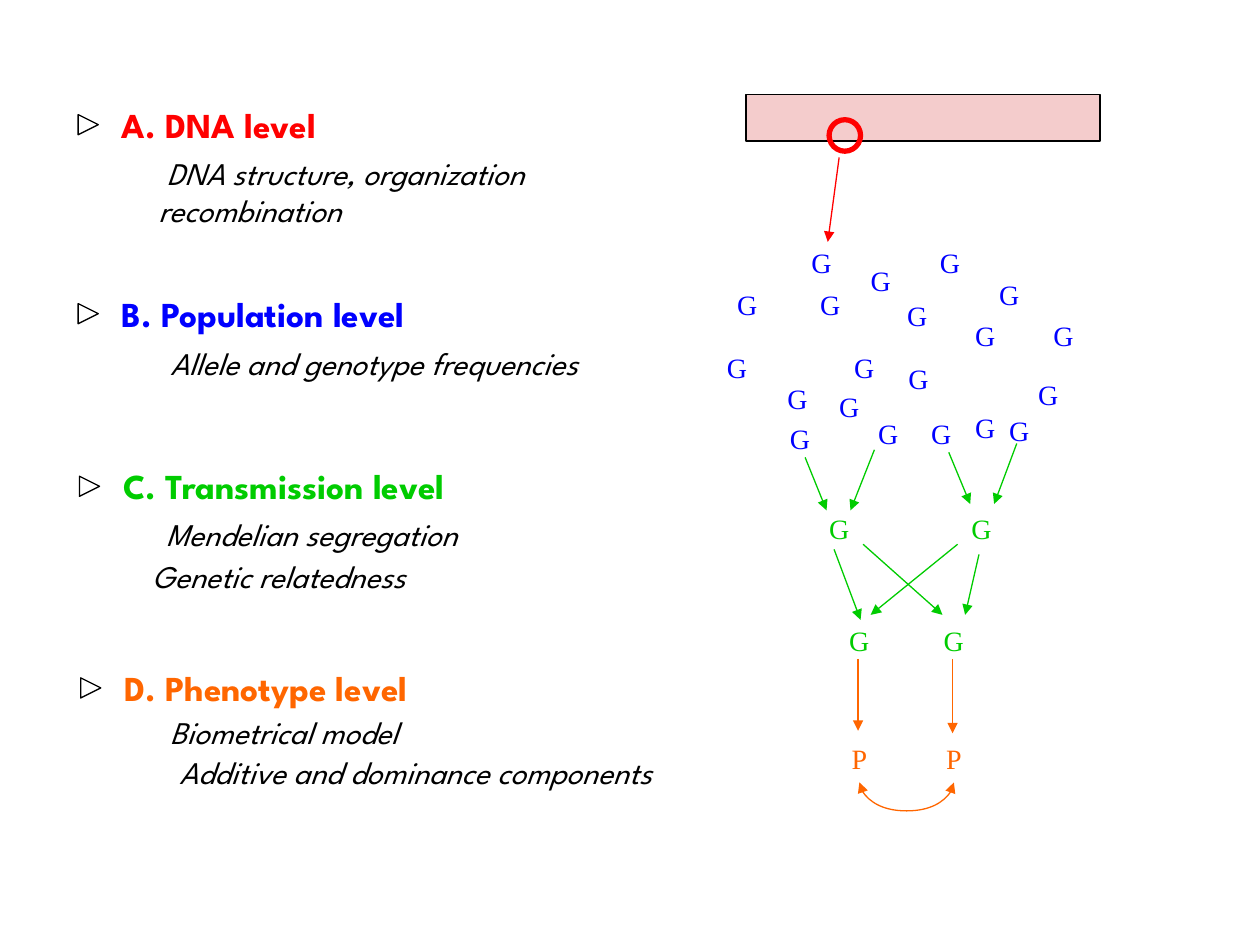
"""Build a slide that links four levels of genetics to a gene flow diagram."""
from dataclasses import dataclass

from lxml.etree import SubElement
from pptx import Presentation
from pptx.dml.color import RGBColor
from pptx.enum.shapes import MSO_CONNECTOR as Connector, MSO_SHAPE as Preset
from pptx.enum.text import MSO_AUTO_SIZE as AutoSize, PP_ALIGN as Align
from pptx.oxml.ns import qn
from pptx.util import Inches, Pt


@dataclass(frozen=True)
class Theme:
    """Hold the colours, fonts and sizes of the slide."""
    dna: str = "FF0000"
    population: str = "0000FF"
    transmission: str = "00CC00"
    phenotype: str = "FF6600"
    ink: str = "000000"
    strand: str = "CC0000"
    strand_opacity: int = 20
    sans: str = "League Spartan"
    serif: str = "Times New Roman"
    heading: int = 20
    topic: int = 18
    symbol: int = 16
    thin: float = 0.75
    thick: float = 3


THEME = Theme()

LEVELS = [
    ("A. DNA level", THEME.dna, 0.87, 0.77, 1.93, [
        ("DNA structure, organization", 1.11, 1.17, 3.27, Align.CENTER),
        ("recombination", 1.10, 1.47, 1.77, Align.CENTER)]),
    ("B. Population level", THEME.population, 0.87, 2.27, 2.76, [
        ("Allele and genotype frequencies", 1.09, 2.68, 3.76, Align.CENTER)]),
    ("C. Transmission level", THEME.transmission, 0.88, 3.64, 3.13, [
        ("Mendelian segregation", 1.11, 4.04, 2.73, Align.CENTER),
        ("Genetic relatedness", 1.11, 4.37, 2.42, Align.LEFT)]),
    ("D. Phenotype level", THEME.phenotype, 0.89, 5.24, 2.67, [
        ("Biometrical model", 1.16, 5.61, 2.19, Align.CENTER),
        ("Additive and dominance components", 1.15, 5.93, 4.30, Align.CENTER)]),
]

SYMBOLS = [
    ("G", THEME.population, 0.36, [
        (6.81, 2.04), (7.64, 3.21), (5.75, 2.23), (6.34, 1.90), (6.56, 3.04),
        (7.10, 2.32), (5.67, 2.73), (7.36, 1.90), (7.64, 2.48), (6.15, 2.98),
        (6.68, 2.73), (7.83, 2.15), (8.14, 2.95), (6.41, 2.23), (7.11, 2.82),
        (8.26, 2.48), (6.87, 3.26), (6.17, 3.30), (7.29, 3.26), (7.91, 3.23)]),
    ("G", THEME.transmission, 0.36, [
        (6.48, 4.01), (7.61, 4.01), (6.64, 4.90), (7.39, 4.90)]),
    ("P", THEME.phenotype, 0.32, [(6.66, 5.84), (7.41, 5.84)]),
]

ARROWS = [
    (THEME.dna, [(6.66, 1.25, 6.57, 1.92)]),
    (THEME.transmission, [
        (6.39, 3.63, 6.56, 4.05), (6.94, 3.57, 6.75, 4.05),
        (7.53, 3.59, 7.70, 4.00), (8.07, 3.52, 7.89, 4.00),
        (6.85, 4.32, 7.48, 4.88), (7.77, 4.40, 7.66, 4.88),
        (6.62, 4.36, 6.83, 4.92), (7.60, 4.32, 6.91, 4.88)]),
    (THEME.phenotype, [(6.81, 5.23, 6.81, 5.80), (7.56, 5.23, 7.56, 5.82)]),
]

STRAND = (5.92, 0.75, 2.81, 0.37)
LOCUS = (6.58, 0.95, 0.25, 0.25)
MARKER_SIZE, MARKER_GAP, MARKER_DROP = 0.16, 0.25, 0.14
HEADING_HEIGHT, TOPIC_HEIGHT, SYMBOL_HEIGHT = 0.43, 0.40, 0.37
CURVE_LEFT, CURVE_RIGHT, CURVE_TOP = 6.82, 7.57, 6.21
CURVE_DEPTH, CURVE_RATIO = 0.25, 144


def add_text(page, text, place, font, size, color, align=Align.LEFT, bold=False, italic=False):
    box = page.shapes.add_textbox(*map(Inches, place))
    frame = box.text_frame
    frame.text = text
    frame.word_wrap = False
    frame.auto_size = AutoSize.SHAPE_TO_FIT_TEXT
    para = frame.paragraphs[0]
    para.alignment = align
    span = para.runs[0].font
    span.name, span.size, span.bold, span.italic = font, Pt(size), bold, italic
    span.color.rgb = RGBColor.from_string(color)


def add_outline(page, preset, place, color, width):
    shape = page.shapes.add_shape(preset, *map(Inches, place))
    shape.shadow.inherit = False
    shape.fill.background()
    shape.line.color.rgb = RGBColor.from_string(color)
    shape.line.width = Pt(width)
    return shape


def add_arrow(page, kind, ends, color, heads=("tailEnd",)):
    arrow = page.shapes.add_connector(kind, *map(Inches, ends))
    arrow.line.color.rgb = RGBColor.from_string(color)
    arrow.line.width = Pt(THEME.thin)
    for head in heads:
        SubElement(arrow.line._get_or_add_ln(), qn(f"a:{head}"), type="triangle")
    SubElement(arrow._element.spPr, qn("a:effectLst"))
    return arrow


def add_level(page, title, color, left, top, width, topics):
    marker = add_outline(
        page, Preset.ISOSCELES_TRIANGLE,
        (left - MARKER_GAP, top + MARKER_DROP, MARKER_SIZE, MARKER_SIZE), THEME.ink, THEME.thin)
    marker.rotation = 90
    add_text(page, title, (left, top, width, HEADING_HEIGHT),
             THEME.sans, THEME.heading, color, bold=True)
    for text, topic_left, topic_top, topic_width, align in topics:
        add_text(page, text, (topic_left, topic_top, topic_width, TOPIC_HEIGHT),
                 THEME.sans, THEME.topic, THEME.ink, align, italic=True)


def add_strand(page):
    strand = add_outline(page, Preset.RECTANGLE, STRAND, THEME.ink, THEME.thin)
    strand.fill.solid()
    strand.fill.fore_color.rgb = RGBColor.from_string(THEME.strand)
    tint = strand._element.spPr.find(qn("a:solidFill"))[0]
    SubElement(tint, qn("a:alpha"), val=str(THEME.strand_opacity * 1000))
    add_outline(page, Preset.OVAL, LOCUS, THEME.dna, THEME.thick)


def add_correlation(page):
    middle = (CURVE_LEFT + CURVE_RIGHT) / 2
    reach = (CURVE_RIGHT - CURVE_LEFT) / 2
    sliver = CURVE_DEPTH / CURVE_RATIO
    ends = (middle + sliver / 2, CURVE_TOP - reach, middle - sliver / 2, CURVE_TOP + reach)
    curve = add_arrow(page, Connector.CURVE, ends, THEME.phenotype, ("headEnd", "tailEnd"))
    form = curve._element.spPr
    form.find(qn("a:xfrm")).set("rot", str(270 * 60000))
    guides = form.find(qn("a:prstGeom")).find(qn("a:avLst"))
    SubElement(guides, qn("a:gd"), name="adj1", fmla=f"val {CURVE_RATIO * 100000}")


def main():
    deck = Presentation()
    deck.slide_width, deck.slide_height = Inches(10), Inches(7.5)
    page = deck.slides.add_slide(deck.slide_layouts[6])
    for level in LEVELS:
        add_level(page, *level)
    for letter, color, width, places in SYMBOLS:
        for left, top in places:
            add_text(page, letter, (left, top, width, SYMBOL_HEIGHT),
                     THEME.serif, THEME.symbol, color, Align.CENTER)
    add_strand(page)
    for color, paths in ARROWS:
        for ends in paths:
            add_arrow(page, Connector.STRAIGHT, ends, color)
    add_correlation(page)
    deck.save("out.pptx")


if __name__ == "__main__":
    main()
